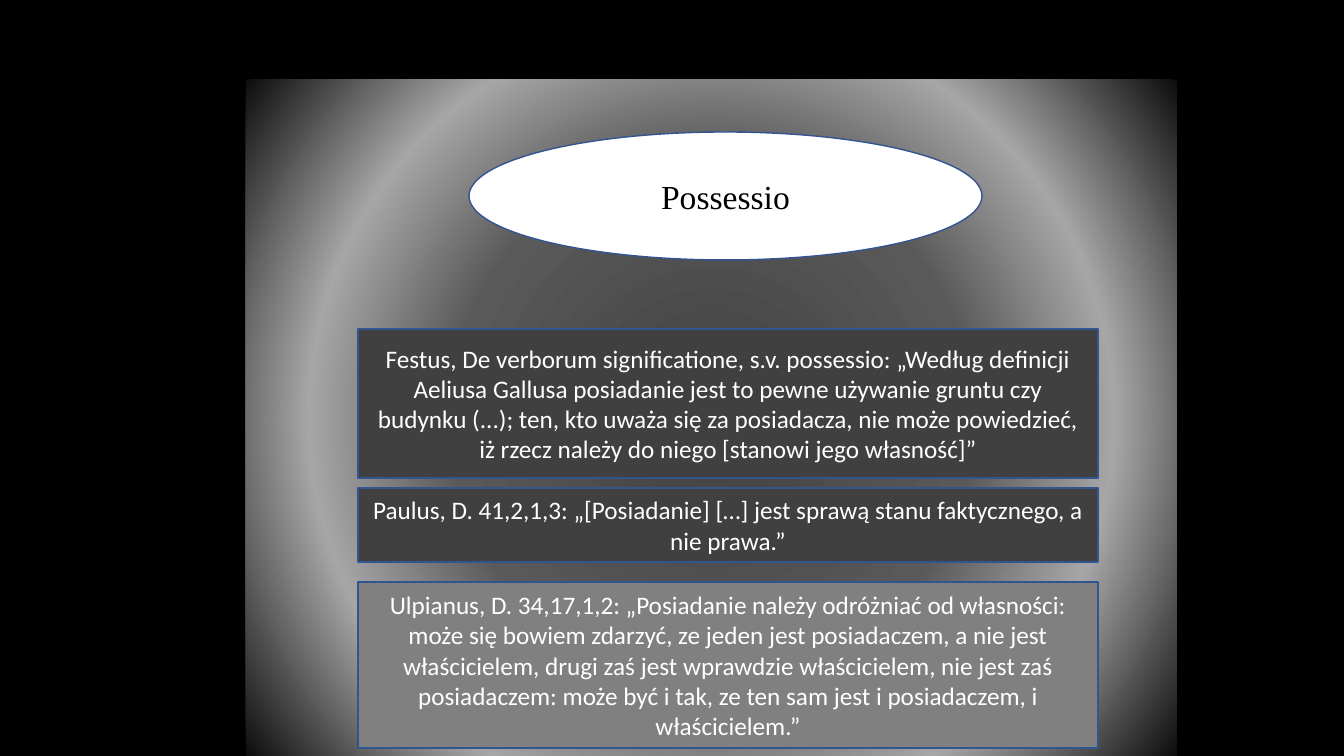
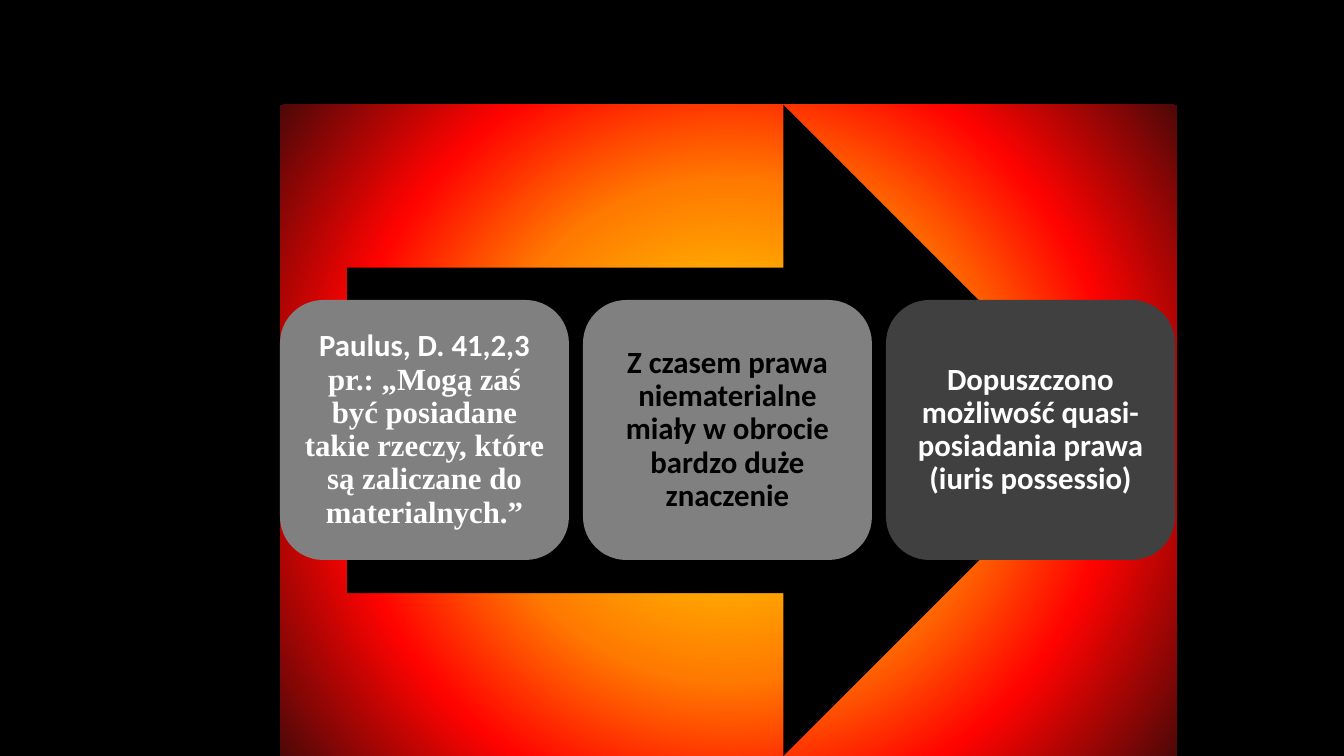
from dataclasses import dataclass

from lxml import etree
from pptx import Presentation
from pptx.dml.color import RGBColor
from pptx.enum.shapes import MSO_SHAPE
from pptx.enum.text import MSO_ANCHOR, PP_ALIGN
from pptx.oxml.ns import qn
from pptx.util import Pt

RECT, OVAL = MSO_SHAPE.RECTANGLE, MSO_SHAPE.OVAL
ROUNDED, ARROW = MSO_SHAPE.ROUNDED_RECTANGLE, MSO_SHAPE.RIGHT_ARROW
MIDDLE, CENTER = MSO_ANCHOR.MIDDLE, PP_ALIGN.CENTER

WIDTH, HEIGHT = 1344, 756
EMU_PER_PX = 12192000 / WIDTH


@dataclass(frozen=True)
class Theme:
    black: str = "000000"
    white: str = "FFFFFF"
    dark: str = "404040"
    gray: str = "808080"
    outline: str = "325491"
    steel: tuple = ((0, "404040"), (45, "595959"), (70, "A6A6A6"), (100, "0D0D0D"))
    fire: tuple = ((0, "FFF200"), (45, "FF7A00"), (70, "FF0300"), (100, "4D0808"))
    sans: str = "Calibri"
    serif: str = "Times New Roman"
    title_size: int = 24
    quote_size: int = 18
    card_size: int = 22


THEME = Theme()


def px(length):
    return round(length * EMU_PER_PX)


def rgb(color):
    return RGBColor.from_string(color)


class Deck:
    def __init__(self):
        self.deck = Presentation()
        self.deck.slide_width, self.deck.slide_height = px(WIDTH), px(HEIGHT)
        background = self.deck.slide_master.background.fill
        background.solid()
        background.fore_color.rgb = rgb(THEME.black)
        self.blank = self.deck.slide_layouts[6]
        self.page = None

    def new_page(self):
        self.page = self.deck.slides.add_slide(self.blank)

    def shape(self, kind, left, top, width, height, fill=None, outlined=False):
        shape = self.page.shapes.add_shape(kind, px(left), px(top), px(width), px(height))
        shape.shadow.inherit = False
        if fill:
            shape.fill.solid()
            shape.fill.fore_color.rgb = rgb(fill)
        if outlined:
            shape.line.color.rgb = rgb(THEME.outline)
            shape.line.width = Pt(1)
        else:
            shape.line.fill.background()
        return shape

    def glow(self, left, top, stops):
        """Panel with a radial gradient, running to the slide's bottom edge."""
        panel = self.shape(RECT, left, top, 1177 - left, HEIGHT - top)
        panel.fill.gradient()
        gradient = panel.element.spPr.find(qn("a:gradFill"))
        for child in list(gradient):
            gradient.remove(child)
        stop_list = etree.SubElement(gradient, qn("a:gsLst"))
        for position, color in stops:
            stop = etree.SubElement(stop_list, qn("a:gs"), pos=str(position * 1000))
            etree.SubElement(stop, qn("a:srgbClr"), val=color)
        radial = etree.SubElement(gradient, qn("a:path"), path="circle")
        etree.SubElement(radial, qn("a:fillToRect"), l="50000", t="50000", r="50000", b="50000")

    def add_text(self, shape, spans, size, color, bold=False, spacing=1.0, insets=(10, 5)):
        """Fill a shape with one centred paragraph of (text, font name) spans."""
        frame = shape.text_frame
        frame.word_wrap = True
        frame.vertical_anchor = MIDDLE
        frame.margin_left = frame.margin_right = px(insets[0])
        frame.margin_top = frame.margin_bottom = px(insets[1])
        para = frame.paragraphs[0]
        para.alignment = CENTER
        para.line_spacing = spacing
        for text, font_name in spans:
            span = para.add_run()
            span.text = text
            span.font.name = font_name
            span.font.size = Pt(size)
            span.font.bold = bold
            span.font.color.rgb = rgb(color)

    def title(self, text):
        oval = self.shape(OVAL, 469, 132, 513, 128, THEME.white, outlined=True)
        self.add_text(oval, [(text, THEME.serif)], THEME.title_size, THEME.black)

    def quote(self, top, height, fill, text):
        box = self.shape(RECT, 358, top, 740, height, fill, outlined=True)
        self.add_text(box, [(text, THEME.sans)], THEME.quote_size, THEME.white)

    def card(self, index, fill, color, spans):
        box = self.shape(ROUNDED, 280 + 303 * index, 300, 289, 260, fill)
        self.add_text(box, spans, THEME.card_size, color, bold=True, spacing=0.9, insets=(9, 9))

    def save(self):
        self.deck.save("out.pptx")


QUOTES = [
    (329, 149, THEME.dark,
     "Festus, De verborum significatione, s.v. possessio: „Według definicji Aeliusa Gallusa "
     "posiadanie jest to pewne używanie gruntu czy budynku (...); ten, kto uważa się za "
     "posiadacza, nie może powiedzieć, iż rzecz należy do niego [stanowi jego własność]”"),
    (488, 74, THEME.dark,
     "Paulus, D. 41,2,1,3: „[Posiadanie] […] jest sprawą stanu faktycznego, a nie prawa.”"),
    (582, 166, THEME.gray,
     "Ulpianus, D. 34,17,1,2: „Posiadanie należy odróżniać od własności: może się bowiem "
     "zdarzyć, ze jeden jest posiadaczem, a nie jest właścicielem, drugi zaś jest wprawdzie "
     "właścicielem, nie jest zaś posiadaczem: może być i tak, ze ten sam jest i posiadaczem, "
     "i właścicielem.”"),
]

CARDS = [
    (THEME.gray, THEME.white,
     [("Paulus, D. 41,2,3 ", THEME.sans),
      ("pr.: „Mogą zaś być posiadane takie rzeczy, które są zaliczane do materialnych.”",
       THEME.serif)]),
    (THEME.gray, THEME.black,
     [("Z czasem prawa niematerialne miały w obrocie bardzo duże znaczenie", THEME.sans)]),
    (THEME.dark, THEME.white,
     [("Dopuszczono możliwość quasi-posiadania prawa (iuris possessio)", THEME.sans)]),
]


def main():
    deck = Deck()

    deck.new_page()
    deck.glow(246, 80, THEME.steel)
    deck.title("Possessio")
    for quote in QUOTES:
        deck.quote(*quote)

    deck.new_page()
    deck.glow(280, 105, THEME.fire)
    deck.shape(ARROW, 347, 105, 762, 651, THEME.black)
    for index, card in enumerate(CARDS):
        deck.card(index, *card)

    deck.save()


if __name__ == "__main__":
    main()
